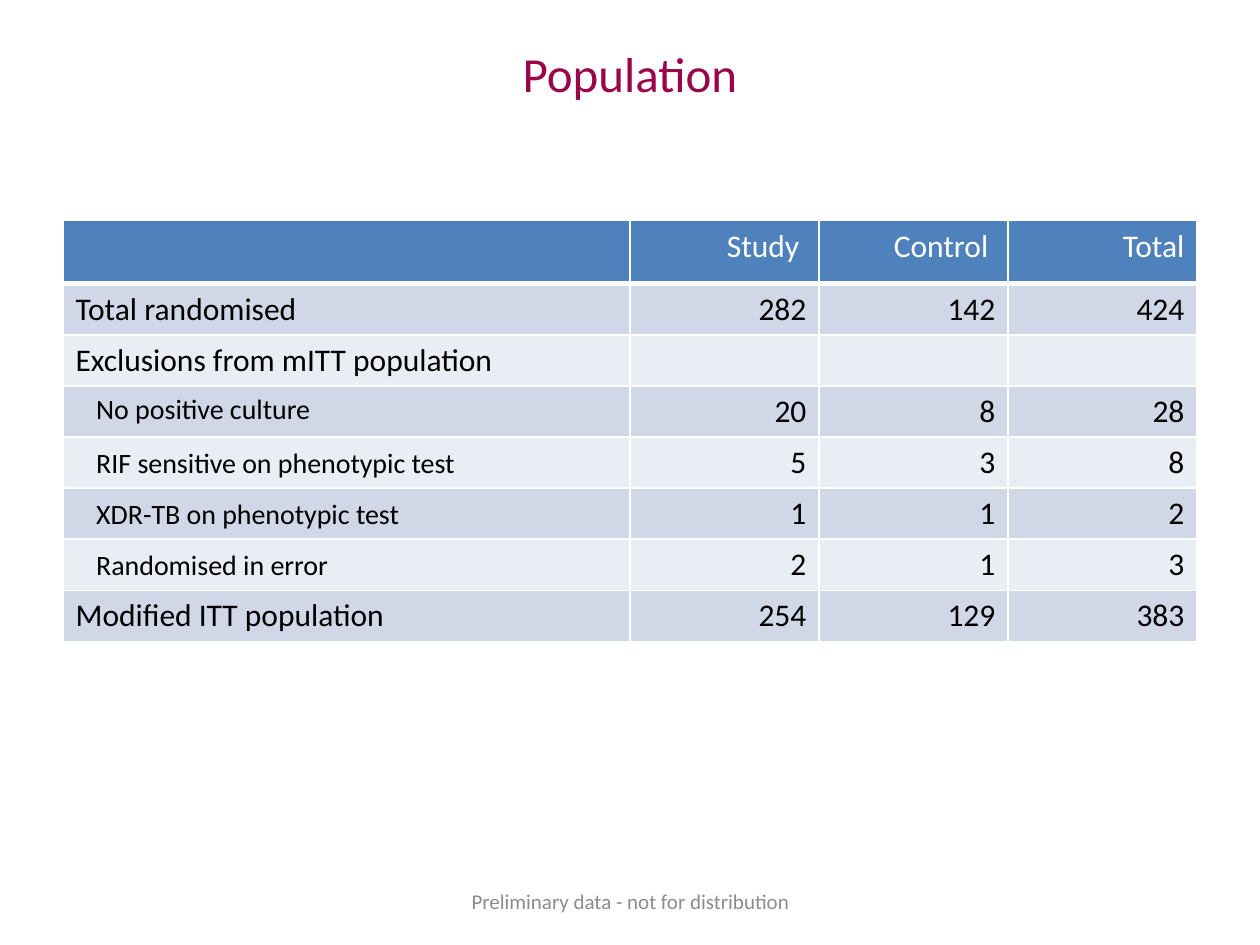
from dataclasses import dataclass
from lxml.etree import SubElement as Sub
from pptx import Presentation
from pptx.dml.color import RGBColor as RGB
from pptx.enum.text import MSO_ANCHOR as Anchor, PP_ALIGN as Align
from pptx.oxml.ns import qn
from pptx.util import Cm, Pt


@dataclass
class Theme:
    font: str = "Calibri"
    title: str = "9A044B"
    head: str = "4F81BD"
    bands: tuple = ("E9EDF4", "D0D8E8")
    white: str = "FFFFFF"
    ink: str = "000000"
    grey: str = "8C8C8C"
    big: int = 28
    body: int = 18
    sub: int = 16
    note: int = 12


theme = Theme()


def write(frame, text, size, color, align):
    frame.text = text
    para = frame.paragraphs[0]
    para.alignment = align
    for font in [para.font] + [run.font for run in para.runs]:
        font.name, font.size, font.bold = theme.font, Pt(size), False
        font.color.rgb = RGB.from_string(color)


def rule(cell, side, width):
    line = Sub(cell._tc.get_or_add_tcPr(), qn(f"a:ln{side}"), w=str(Pt(width)))
    Sub(Sub(line, qn("a:solidFill")), qn("a:srgbClr"), val=theme.white)


prs = Presentation()
prs.slide_width, prs.slide_height = Cm(25.4), Cm(19.05)
slide = prs.slides.add_slide(prs.slide_layouts[6])

# Title and footer
for text, box, size, color, anchor in (
    ("Population", (1.27, 0.76, 22.86, 3.18), theme.big, theme.title, Anchor.TOP),
    ("Preliminary data - not for distribution", (8.69, 17.65, 8.04, 1.02),
     theme.note, theme.grey, Anchor.MIDDLE),
):
    frame = slide.shapes.add_textbox(*map(Cm, box)).text_frame
    frame.word_wrap = True
    frame.vertical_anchor = anchor
    write(frame, text, size, color, Align.CENTER)

# Table data
rows = [
    ("", "Study ", "Control ", "Total"),
    ("Total randomised", "282", "142", "424"),
    ("Exclusions from mITT population", "", "", ""),
    ("No positive culture", "20", "8", "28"),
    ("RIF sensitive on phenotypic test", "5", "3", "8"),
    ("XDR-TB on phenotypic test", "1", "1", "2"),
    ("Randomised in error", "2", "1", "3"),
    ("Modified ITT population", "254", "129", "383"),
]
subs = range(3, 7)

# Table grid
table = slide.shapes.add_table(
    len(rows), 4, Cm(1.27), Cm(4.45), Cm(22.86), Cm(8.48)).table
table.first_row = table.horz_banding = False
for col, width in zip(table.columns, (11.43, 3.81, 3.81, 3.81)):
    col.width = Cm(width)
for row in table.rows:
    row.height = Cm(1.03)
table.rows[0].height = Cm(1.27)

# Table cells
for r, row in enumerate(rows):
    for c, text in enumerate(row):
        cell = table.cell(r, c)
        head, sub = r == 0, c == 0 and r in subs
        for side in "LRTB":
            rule(cell, side, 3 if head and side == "B" else 1)
        cell.fill.solid()
        cell.fill.fore_color.rgb = RGB.from_string(
            theme.head if head else theme.bands[r % 2])
        write(cell.text_frame, text, theme.sub if sub else theme.body,
              theme.white if head else theme.ink,
              Align.RIGHT if c else Align.LEFT)
        if sub:
            cell.margin_left = Cm(0.67)
            # The first reason sits a little higher than the others
            cell.margin_top = Cm(0.13 if r == subs[0] else 0.2)

prs.save("out.pptx")
